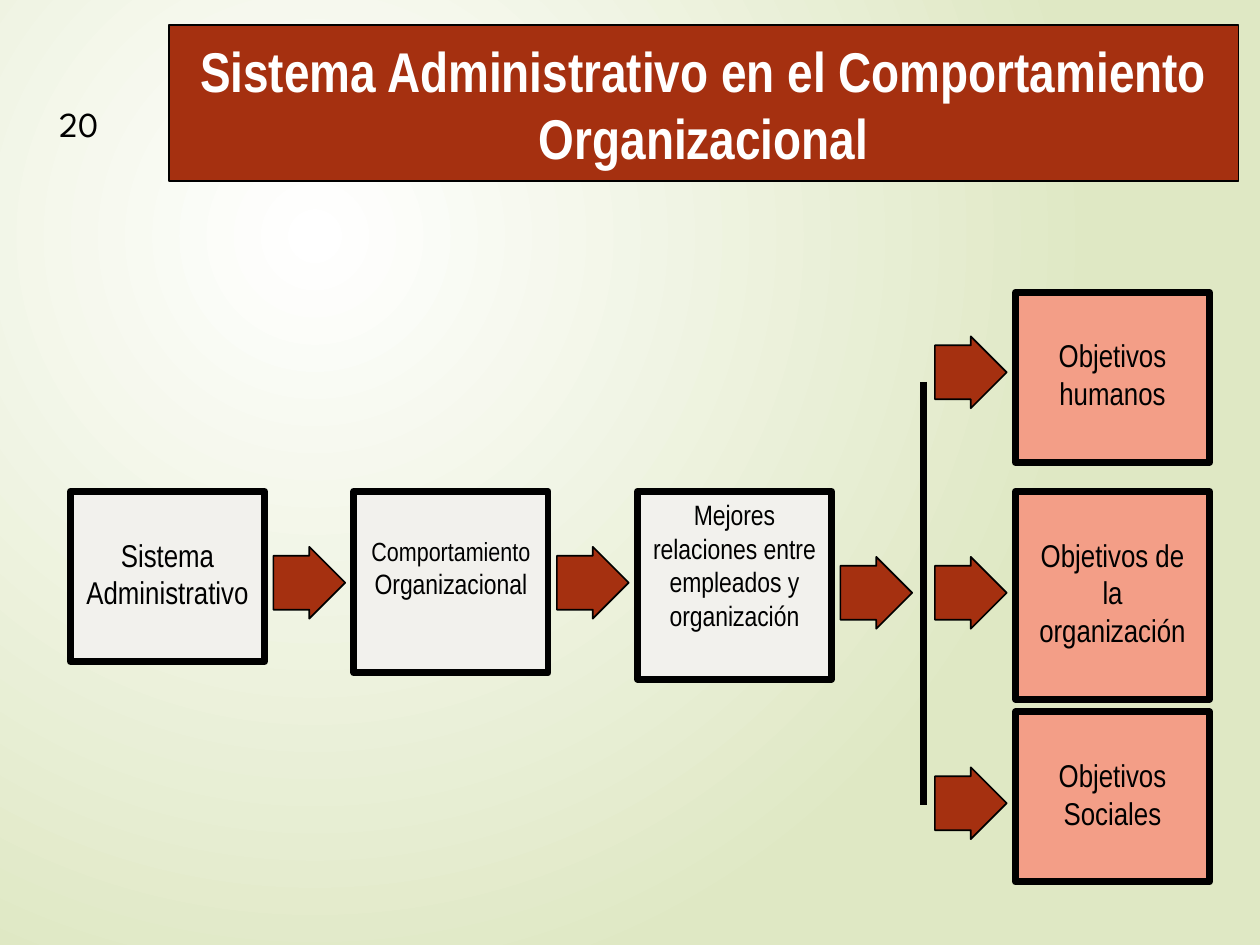
"""Build the slide on the administrative system in organizational behavior."""
from lxml.etree import SubElement
from pptx import Presentation
from pptx.dml.color import RGBColor
from pptx.enum.shapes import MSO_CONNECTOR, MSO_SHAPE
from pptx.enum.text import MSO_ANCHOR, PP_ALIGN
from pptx.oxml.ns import qn
from pptx.util import Inches, Pt

THEME = {
    "rust": "A53010", "pale": "F2F1ED", "coral": "F39E87",
    "black": "000000", "white": "FFFFFF", "green": "DFE8C4",
    "font": "Arial Narrow", "digit": "League Spartan",
    "title": 32, "number": 20, "large": 18, "mid": 16, "small": 15,
    "thin": 1, "thick": 4,
}
TITLE = "Sistema Administrativo en el Comportamiento Organizacional"
NUMBER = "20"
LEFT, STEP, WIDE = 0.56, 0.75, 1.54
ROWS = (2.32, 3.9, 5.65)
ARROW, BACK = 0.57, 0.64
PAD, DROP = 0.05, 0.35

BOXES = [
    (0, 1, 1.35, "pale", DROP, [("Sistema", "large"), ("Administrativo", "large")]),
    (3, 1, 1.44, "pale", DROP, [("Comportamiento", "small"), ("Organizacional", "mid")]),
    (6, 1, 1.49, "pale", PAD, [("Mejores relaciones entre empleados y organización", "mid")]),
    (10, 0, 1.35, "coral", DROP, [("Objetivos humanos", "large")]),
    (10, 1, 1.65, "coral", DROP, [("Objetivos de la organización", "large")]),
    (10, 2, 1.35, "coral", DROP, [("Objetivos Sociales", "large")]),
]
ARROWS = [(3, 4.34), (6, 4.34), (9, 4.42), (10, 2.67), (10, 4.42), (10, 6.09)]
BAR = (7.33, 3.03, 6.39)


def tint(name):
    return RGBColor.from_string(THEME[name])


def col(index):
    return LEFT + STEP * index


def write(shape, lines, color="black", font="font", bold=False,
          align=PP_ALIGN.CENTER, anchor=MSO_ANCHOR.TOP, top=PAD):
    frame = shape.text_frame
    frame.word_wrap = True
    frame.vertical_anchor = anchor
    frame.margin_top = Inches(top)
    for index, (text, size) in enumerate(lines):
        para = frame.add_paragraph() if index else frame.paragraphs[0]
        para.alignment = align
        run = para.add_run()
        run.text = text
        run.font.name = THEME[font]
        run.font.size = Pt(THEME[size])
        run.font.bold = bold
        run.font.color.rgb = tint(color)


def draw(slide, kind, area, fill, width):
    shape = slide.shapes.add_shape(kind, *map(Inches, area))
    shape.shadow.inherit = False
    shape.fill.solid()
    shape.fill.fore_color.rgb = tint(fill)
    shape.line.color.rgb = tint("black")
    shape.line.width = Pt(THEME[width])
    return shape


def paint(slide):
    fill = slide.background.fill
    fill.gradient()
    for stop, name in zip(fill.gradient_stops, ("white", "green")):
        stop.color.rgb = tint(name)
    grad = slide.element.find(".//" + qn("a:gradFill"))
    grad.remove(grad.find(qn("a:lin")))
    glow = SubElement(grad, qn("a:path"), {"path": "circle"})
    SubElement(glow, qn("a:fillToRect"),
               {"l": "50000", "t": "50000", "r": "100000", "b": "100000"})


def main():
    deck = Presentation()
    deck.slide_width, deck.slide_height = Inches(10), Inches(7.5)
    slide = deck.slides.add_slide(deck.slide_layouts[6])
    paint(slide)

    head = draw(slide, MSO_SHAPE.RECTANGLE, (1.34, 0.2, 8.49, 1.24), "rust", "thin")
    write(head, [(TITLE, "title")], "white", bold=True, anchor=MSO_ANCHOR.MIDDLE)

    for place, row, high, fill, top, lines in BOXES:
        area = (col(place), ROWS[row], WIDE, high)
        write(draw(slide, MSO_SHAPE.RECTANGLE, area, fill, "thick"), lines, top=top)

    left, top, end = map(Inches, BAR)
    bar = slide.shapes.add_connector(MSO_CONNECTOR.STRAIGHT, left, top, left, end)
    bar.line.color.rgb = tint("black")
    bar.line.width = Pt(THEME["thick"])
    SubElement(bar.element.spPr, qn("a:effectLst"))

    for place, top in ARROWS:
        area = (col(place) - BACK, top, ARROW, ARROW)
        arrow = draw(slide, MSO_SHAPE.RIGHT_ARROW, area, "rust", "thin")
        arrow.adjustments[0], arrow.adjustments[1] = 0.75, 0.5

    page = slide.shapes.add_textbox(*map(Inches, (0.24, 0.78, 0.64, 0.4)))
    write(page, [(NUMBER, "number")], font="digit",
          align=PP_ALIGN.RIGHT, anchor=MSO_ANCHOR.MIDDLE)
    deck.save("out.pptx")


if __name__ == "__main__":
    main()
